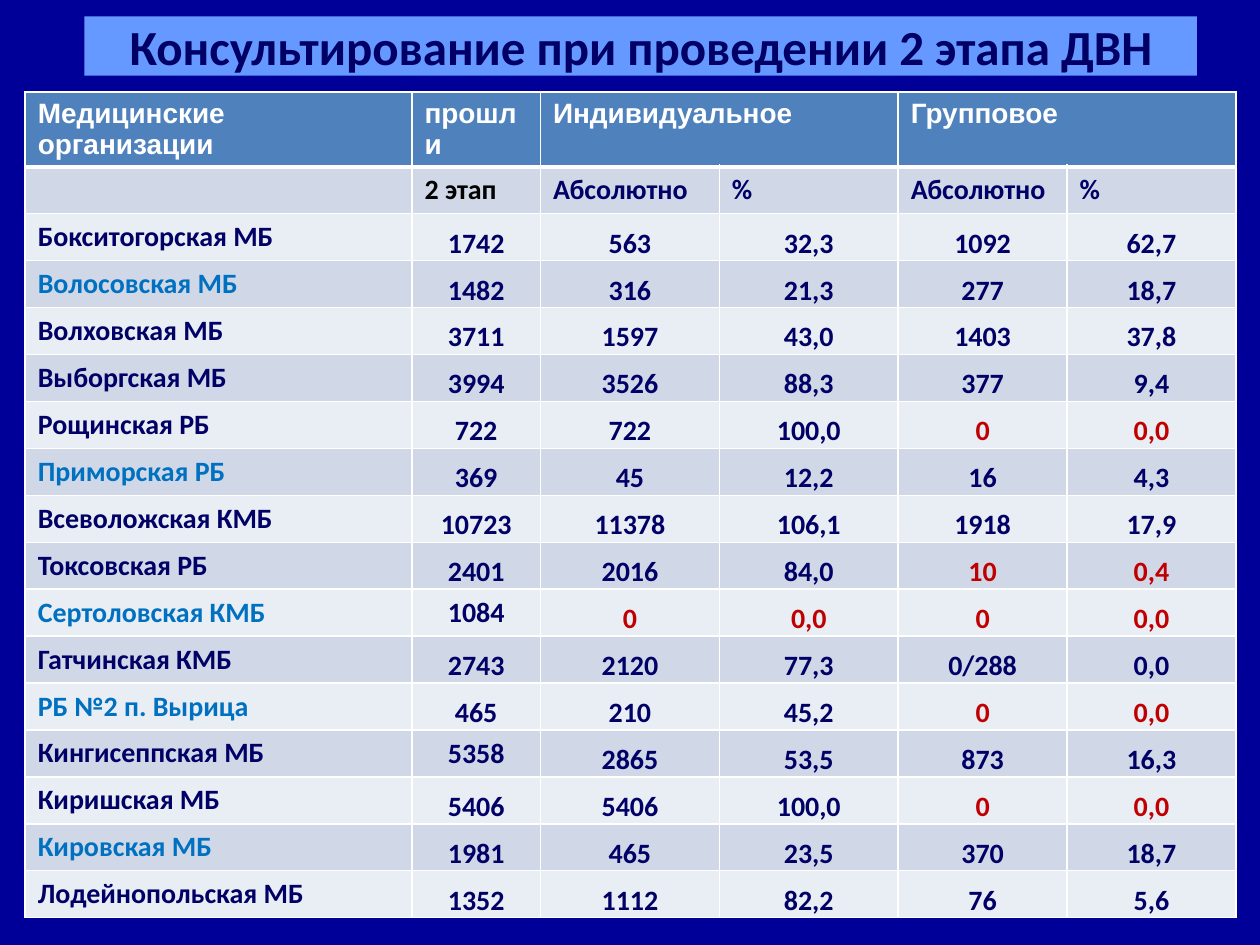
"""Build the slide on counselling in stage two of the health check."""
from dataclasses import dataclass

from lxml.etree import SubElement as Sub
from pptx import Presentation
from pptx.dml.color import RGBColor as Rgb
from pptx.enum.text import MSO_ANCHOR as Anchor, PP_ALIGN as Align
from pptx.oxml.ns import qn
from pptx.util import Inches, Pt

HUES = {
    "back": "000099", "title": "6699FF", "ink": "000066", "head": "4F81BD",
    "dark": "D0D8E8", "light": "E9EDF4", "white": "FFFFFF", "black": "000000",
    "blue": "0070C0", "red": "C00000",
}
COLS = [3.07, 1.02, 1.42, 1.42, 1.34, 1.34]
TOP, TALL, HEAD = 0.73, 6.54, 0.58
SLIM = {"margin_left": 0.01, "margin_right": 0.01, "margin_top": 0.01, "margin_bottom": 0}
HEADS = ["Медицинские организации", "прошли", "Индивидуальное", "", "Групповое", ""]
SUBS = ["", "2 этап", "Абсолютно", "%", "Абсолютно", "%"]


@dataclass
class Clinic:
    """One body row: its name, values, name hue, first red column and mid-set count."""
    name: str
    vals: str
    hue: str = "ink"
    red: int = 6
    mid: bool = False


CLINICS = [
    Clinic("Бокситогорская МБ", "1742 563 32,3 1092 62,7"),
    Clinic("Волосовская МБ", "1482 316 21,3 277 18,7", "blue"),
    Clinic("Волховская МБ", "3711 1597 43,0 1403 37,8"),
    Clinic("Выборгская МБ", "3994 3526 88,3 377 9,4"),
    Clinic("Рощинская РБ", "722 722 100,0 0 0,0", red=4),
    Clinic("Приморская РБ", "369 45 12,2 16 4,3", "blue"),
    Clinic("Всеволожская КМБ", "10723 11378 106,1 1918 17,9"),
    Clinic("Токсовская РБ", "2401 2016 84,0 10 0,4", red=4),
    Clinic("Сертоловская КМБ", "1084 0 0,0 0 0,0", "blue", 2, True),
    Clinic("Гатчинская КМБ", "2743 2120 77,3 0/288 0,0"),
    Clinic("РБ №2 п. Вырица", "465 210 45,2 0 0,0", "blue", 4),
    Clinic("Кингисеппская МБ", "5358 2865 53,5 873 16,3", mid=True),
    Clinic("Киришская МБ", "5406 5406 100,0 0 0,0", red=4),
    Clinic("Кировская МБ", "1981 465 23,5 370 18,7", "blue"),
    Clinic("Лодейнопольская МБ", "1352 1112 82,2 76 5,6"),
]


def tint(name: str) -> Rgb:
    """Return the named colour."""
    return Rgb.from_string(HUES[name])


def paint(fill, name: str) -> None:
    """Make a fill solid in the named colour."""
    fill.solid()
    fill.fore_color.rgb = tint(name)


def write(frame, text: str, hue: str, font: str = "Calibri", size: int = 16, align=Align.LEFT) -> None:
    """Write one bold line of text into a frame."""
    para = frame.paragraphs[0]
    para.alignment = align
    run = para.add_run()
    run.text = text
    for key, val in {"name": font, "size": Pt(size), "bold": True}.items():
        setattr(run.font, key, val)
    run.font.color.rgb = tint(hue)


def edge(cell, low: int) -> None:
    """Draw white borders round a cell, the lower one of the given width."""
    props = cell._tc.get_or_add_tcPr()
    for side, wide in {"L": 1, "R": 1, "T": 1, "B": low}.items():
        line = Sub(props, qn(f"a:ln{side}"), w=str(Pt(wide)))
        Sub(Sub(line, qn("a:solidFill")), qn("a:srgbClr"), val=HUES["white"])


def set_cell(cell, text: str, fill: str, hue: str, font: str = "Calibri", low: int = 1) -> None:
    """Give a cell its borders, fill and text."""
    edge(cell, low)
    paint(cell.fill, fill)
    if text:
        write(cell.text_frame, text, hue, font)
    else:
        cell.margin_top = cell.margin_bottom = 0


def set_row(grid, row: int, clinic: Clinic) -> None:
    """Fill one body row."""
    fill = "dark" if row % 2 else "light"
    set_cell(grid.cell(row, 0), clinic.name, fill, clinic.hue)
    for col, val in enumerate(clinic.vals.split(), 1):
        cell = grid.cell(row, col)
        set_cell(cell, val, fill, "red" if col >= clinic.red else "ink")
        cell.text_frame.paragraphs[0].alignment = Align.CENTER
        cell.vertical_anchor = Anchor.MIDDLE if clinic.mid and col == 1 else Anchor.BOTTOM
        for key, gap in SLIM.items():
            setattr(cell, key, Inches(gap))


def add_title(slide) -> None:
    """Place and format the title."""
    title = slide.shapes.title
    place = {"left": 0.67, "top": 0.13, "width": 8.83, "height": 0.47}
    for key, val in place.items():
        setattr(title, key, Inches(val))
    paint(title.fill, "title")
    frame = title.text_frame
    frame.word_wrap = True
    frame.vertical_anchor = Anchor.MIDDLE
    write(frame, "Консультирование при проведении 2 этапа ДВН", "ink", size=28, align=Align.CENTER)


def add_grid(slide) -> None:
    """Add the table of clinics."""
    count = len(CLINICS) + 2
    grid = slide.shapes.add_table(
        count, len(COLS), Inches(0.2), Inches(TOP), Inches(sum(COLS)), Inches(TALL)
    ).table
    for col, wide in zip(grid.columns, COLS):
        col.width = Inches(wide)
    for num, row in enumerate(grid.rows):
        row.height = Inches((TALL - HEAD) / (count - 1) if num else HEAD)
    for col, (head, sub) in enumerate(zip(HEADS, SUBS)):
        set_cell(grid.cell(0, col), head, "head", "white", "Arial", 3)
        set_cell(grid.cell(1, col), sub, "dark", "black" if col == 1 else "ink")
    for col in (2, 4):
        grid.cell(0, col).merge(grid.cell(0, col + 1))
    for row, clinic in enumerate(CLINICS, 2):
        set_row(grid, row, clinic)


def main() -> None:
    """Build and save the deck."""
    deck = Presentation()
    deck.slide_width, deck.slide_height = Inches(10), Inches(7.5)
    slide = deck.slides.add_slide(deck.slide_layouts[5])
    paint(slide.background.fill, "back")
    add_title(slide)
    add_grid(slide)
    deck.save("out.pptx")


if __name__ == "__main__":
    main()
